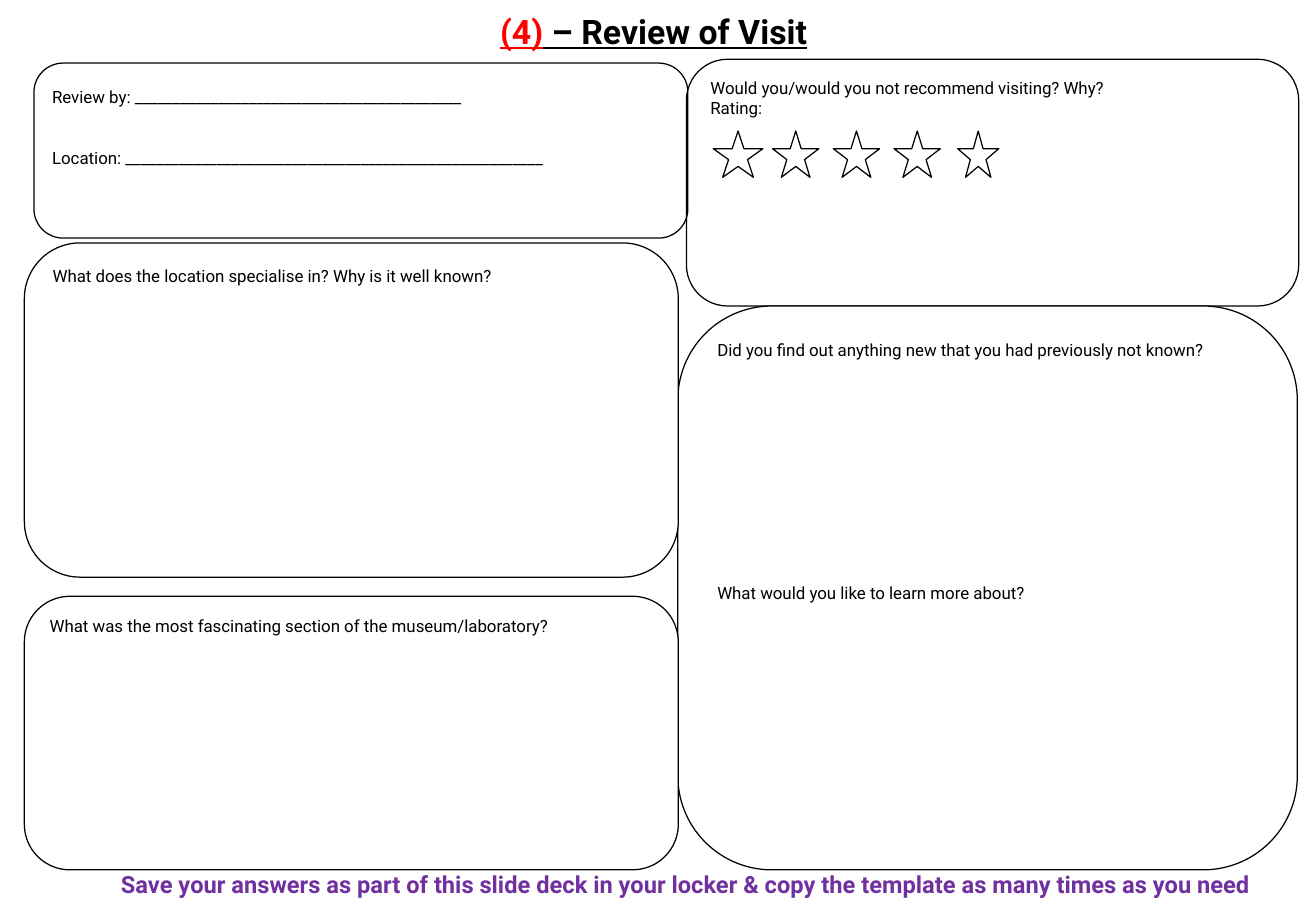
"""Build the review-of-visit worksheet slide."""
from pptx import Presentation
from pptx import util as u
from pptx.dml.color import RGBColor
from pptx.enum import shapes, text

BLACK, WHITE, RED, PURPLE = "000000", "FFFFFF", "FF0000", "7030A0"
BODY = {"name": "Roboto", "size": u.Pt(10)}
TITLE = {"name": "Roboto", "size": u.Pt(20), "bold": True, "underline": True}
FOOTER = {"name": "Roboto", "size": u.Pt(14), "bold": True}
ROUNDED = shapes.MSO_SHAPE.FLOWCHART_ALTERNATE_PROCESS

BOXES = [
    ((14.35, 1.24, 12.8, 5.16),
     ["Would you/would you not recommend visiting? Why?", "Rating:"], 0),
    ((14.17, 6.4, 12.95, 11.79),
     ["Did you find out anything new that you had previously not known?",
      "What would you like to learn more about?"], 132.3),
    ((0.51, 12.47, 13.67, 5.72),
     ["What was the most fascinating section of the museum/laboratory?"], 0),
    ((0.51, 5.08, 13.67, 6.99),
     ["What does the location specialise in? Why is it well known?"], 0),
]
STARS = [(14.91, 1.04), (16.15, 0.97), (17.42, 0.97), (18.69, 0.97), (20.02, 0.86)]


def rgb(value):
    """Turn a hex string into a colour."""
    return RGBColor.from_string(value)


def cm(at):
    """Turn centimetre numbers into lengths."""
    return [u.Cm(v) for v in at]


def set_attrs(obj, values):
    """Set every attribute named in a dict."""
    for name, value in values.items():
        setattr(obj, name, value)


def add_run(p, words, fmt, color=BLACK):
    """Add a formatted run to a paragraph."""
    r = p.add_run()
    r.text = words
    set_attrs(r.font, fmt)
    r.font.color.rgb = rgb(color)


def add_outline(s, kind, at, fill=WHITE, line=BLACK):
    """Add a flat preset shape."""
    sp = s.shapes.add_shape(kind, *cm(at))
    sp.shadow.inherit = False
    if fill:
        sp.fill.solid()
        sp.fill.fore_color.rgb = rgb(fill)
    else:
        sp.fill.background()
    if line:
        sp.line.color.rgb = rgb(line)
        sp.line.width = u.Pt(0.75)
    else:
        sp.line.fill.background()
    return sp


def write_prompts(sp, prompts, gap=0):
    """Write prompts from the top of a shape, spaced by a gap in points."""
    tf = sp.text_frame
    set_attrs(tf, {"word_wrap": True, "vertical_anchor": text.MSO_ANCHOR.TOP})
    for i, prompt in enumerate(prompts):
        p = tf.add_paragraph() if i else tf.paragraphs[0]
        p.alignment = text.PP_ALIGN.LEFT
        p.space_before = u.Pt(gap if i else 0)
        add_run(p, prompt, BODY)


def format_title(s):
    """Place and fill the title placeholder."""
    sp = s.shapes.title
    set_attrs(sp, dict(zip(("left", "top", "width", "height"),
                           cm((3.76, 0.1, 19.81, 1.02)))))
    tf = sp.text_frame
    set_attrs(tf, {"word_wrap": True, "auto_size": text.MSO_AUTO_SIZE.NONE,
                   "vertical_anchor": text.MSO_ANCHOR.TOP})
    p = tf.paragraphs[0]
    p.alignment = text.PP_ALIGN.CENTER
    add_run(p, "(4)", TITLE, RED)
    add_run(p, " – Review of Visit", TITLE)


def add_footer(s):
    """Add the reminder along the bottom edge."""
    tf = s.shapes.add_textbox(*cm((1.17, 18.06, 26.34, 0.86))).text_frame
    tf.word_wrap = True
    p = tf.paragraphs[0]
    p.alignment = text.PP_ALIGN.CENTER
    add_run(p, "Save your answers as part of this slide deck in your locker "
            "& copy the template as many times as you need", FOOTER, PURPLE)


def main():
    """Build and save the slide."""
    prs = Presentation()
    set_attrs(prs, {"slide_width": u.Cm(27.51), "slide_height": u.Cm(19.05)})
    s = prs.slides.add_slide(prs.slide_layouts[5])
    format_title(s)
    for at, prompts, gap in BOXES:
        write_prompts(add_outline(s, ROUNDED, at), prompts, gap)
    add_outline(s, ROUNDED, (0.71, 1.32, 13.67, 3.66), fill=None)
    details = add_outline(s, shapes.MSO_SHAPE.RECTANGLE,
                          (0.84, 1.68, 13.34, 2.62), line=None)
    write_prompts(details, ["Review by: " + "_" * 43, "Location: " + "_" * 55], 24.4)
    for left, width in STARS:
        add_outline(s, shapes.MSO_SHAPE.STAR_5_POINT, (left, 2.74, width, 0.97))
    add_footer(s)
    prs.save("out.pptx")


if __name__ == "__main__":
    main()
